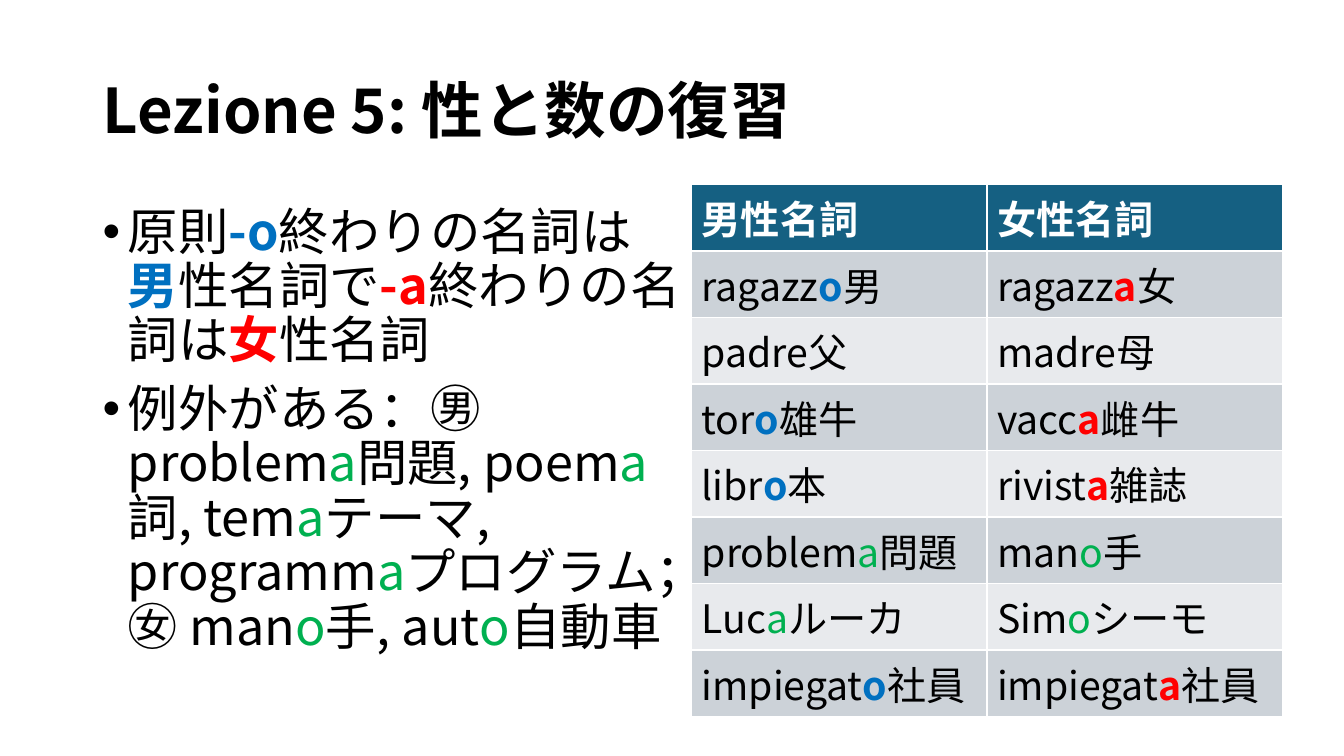
from lxml import etree
from pptx import Presentation
from pptx.dml.color import RGBColor
from pptx.enum.text import MSO_ANCHOR
from pptx.oxml.ns import qn
from pptx.util import Inches, Pt

MIDDLE = MSO_ANCHOR.MIDDLE
FONT = "Noto Sans CJK JP"
BLACK = RGBColor(0x00, 0x00, 0x00)
WHITE = RGBColor(0xFF, 0xFF, 0xFF)
BLUE = RGBColor(0x00, 0x70, 0xC0)
RED = RGBColor(0xFF, 0x00, 0x00)
GREEN = RGBColor(0x00, 0xB0, 0x50)
HEADER = RGBColor(0x15, 0x60, 0x82)
BANDS = [RGBColor(0xE8, 0xEA, 0xED), RGBColor(0xCC, 0xD2, 0xD8)]

# Marks: masculine, feminine, exception -> colour and bold
MARKS = {"M": (BLUE, True), "F": (RED, True), "X": (GREEN, False)}


def write(p, text, size, color=BLACK, bold=False):
    """Every second part between bars is marked by its first letter."""
    for i, part in enumerate(text.split("|")):
        marked = i % 2 == 1
        r = p.add_run()
        r.text = part[1:] if marked else part
        r.font.size = Pt(size)
        r.font.name = FONT
        r.font.color.rgb, r.font.bold = MARKS[part[0]] if marked else (color, bold)
        etree.SubElement(r.font._element, qn("a:ea"), typeface=FONT)


def add_text(left, top, width, height):
    sp = s.shapes.add_textbox(Inches(left), Inches(top), Inches(width), Inches(height))
    sp.text_frame.word_wrap = True
    return sp.text_frame


prs = Presentation()
prs.slide_width, prs.slide_height = Inches(13.33), Inches(7.5)
s = prs.slides.add_slide(prs.slide_layouts[6])

# Title
tf = add_text(0.92, 0.4, 11.5, 1.45)
tf.vertical_anchor = MIDDLE
p = tf.paragraphs[0]
p.line_spacing = 0.9
write(p, "Lezione 5: 性と数の復習", 44, bold=True)

# Rules of gender
rules = [
    "原則|M-o|終わりの名詞は|M男|性名詞で|F-a|終わりの名詞は|F女|性名詞",
    "例外がある：㊚ problem|Xa|問題, poem|Xa|詞, tem|Xa|テーマ, programm|Xa|"
    "プログラム；㊛ man|Xo|手, aut|Xo|自動車",
]
tf = add_text(0.92, 2, 5.94, 4.76)
for i, rule in enumerate(rules):
    p = tf.paragraphs[0] if i == 0 else tf.add_paragraph()
    p.line_spacing = 0.9
    p.space_before = Pt(10)
    pPr = p._p.get_or_add_pPr()
    pPr.set("marL", str(Inches(0.25)))
    pPr.set("indent", str(Inches(-0.25)))
    etree.SubElement(pPr, qn("a:buFont"), typeface="Arial")
    etree.SubElement(pPr, qn("a:buChar"), char="•")
    write(p, rule, 36)

# Table of noun pairs
nouns = [
    ("男性名詞", "女性名詞"),
    ("ragazz|Mo|男", "ragazz|Fa|女"),
    ("padre父", "madre母"),
    ("tor|Mo|雄牛", "vacc|Fa|雌牛"),
    ("libr|Mo|本", "rivist|Fa|雑誌"),
    ("problem|Xa|問題", "man|Xo|手"),
    ("Luc|Xa|ルーカ", "Sim|Xo|シーモ"),
    ("impiegat|Mo|社員", "impiegat|Fa|社員"),
]
ROW_H, COL_W = 0.66, 2.93
table = s.shapes.add_table(len(nouns), 2, Inches(6.86), Inches(1.83),
                           Inches(2 * COL_W), Inches(len(nouns) * ROW_H)).table
for row, pair in enumerate(nouns):
    head = row == 0
    for col, noun in enumerate(pair):
        cell = table.cell(row, col)
        cell.fill.solid()
        cell.fill.fore_color.rgb = HEADER if head else BANDS[row % 2]
        write(cell.text_frame.paragraphs[0], noun, 28, WHITE if head else BLACK, head)

prs.save("out.pptx")
